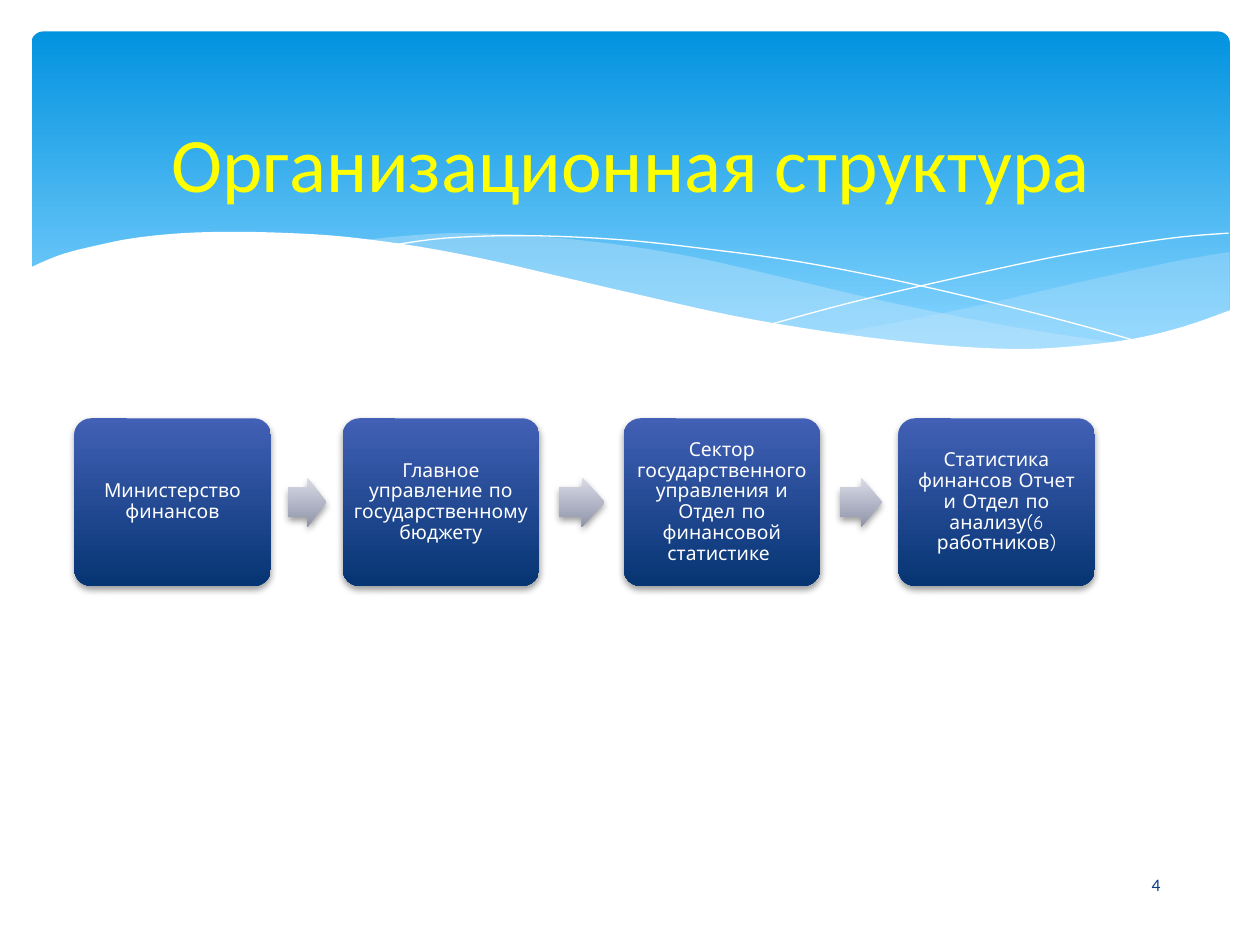
"""Build the organisational structure slide: a wave header above a four-step process."""
import lxml.etree
import pptx
import pptx.dml.color
import pptx.enum.shapes
import pptx.enum.text
import pptx.oxml.ns
import pptx.util

Inches = pptx.util.Inches
Pt = pptx.util.Pt
ShapeType = pptx.enum.shapes.MSO_SHAPE

COLORS = {
    "white": "FFFFFF", "title": "FFFF00", "number": "073E87", "wave": "C6E7FC",
    "sky_top": "0293E0", "sky_bottom": "83D3FE",
    "step_top": "4260B5", "step_bottom": "063573",
    "arrow_top": "DADCE6", "arrow_bottom": "8F94AA", "shadow": "000000",
}
STEP_TOP, STEP_WIDTH, STEP_HEIGHT, ARROW_HEIGHT = 3.32, 1.56, 1.33, 0.39
STEPS = [
    (0.59, "Министерство финансов"),
    (2.72, "Главное управление по государственному бюджету"),
    (4.95, "Сектор государственного управления и Отдел по финансовой статистике "),
    (7.13, "Статистика финансов Отчет и Отдел по анализу(6 работников)"),
]
ARROWS = [(2.29, 0.3, -0.3), (4.44, 0.36, 0.3), (6.67, 0.33, 0)]

RIGHT_WAVE_TOP = [(9.76, 2), (9.35, 2.07), (8.61, 2.23), (7.79, 2.42), (7.06, 2.57), (6.61, 2.65)]
RIGHT_WAVE_BOTTOM = [(6.61, 2.65), (7.19, 2.72), (7.69, 2.77), (8.14, 2.78), (8.63, 2.75),
                     (9.05, 2.69), (9.42, 2.59), (9.76, 2.47)]
LEFT_WAVE_TOP = [(8.93, 2.73), (8.07, 2.6), (7.06, 2.4), (6.29, 2.22), (5.55, 2.05), (4.89, 1.94),
                 (4.2, 1.87), (3.61, 1.85), (3.13, 1.88), (2.86, 1.91)]
LEFT_WAVE_BOTTOM = [(2.86, 1.91), (3.62, 2.03), (4.49, 2.22), (5.3, 2.4), (6.01, 2.55), (6.65, 2.66),
                    (7.22, 2.74), (7.73, 2.77), (8.18, 2.78), (8.57, 2.77), (8.93, 2.73)]
FALLING_LINE = [(3.09, 1.95), (3.53, 1.89), (4.16, 1.87), (4.89, 1.9), (5.56, 1.97), (6.36, 2.08),
                (7.27, 2.26), (8.31, 2.51), (9.07, 2.72)]
RISING_LINE = [(6.13, 2.57), (6.72, 2.41), (7.48, 2.23), (8.36, 2.04), (8.95, 1.94), (9.38, 1.88),
               (9.75, 1.85)]
WHITE_WAVE = [(9.77, 2.46), (9.4, 2.59), (8.99, 2.69), (8.5, 2.75), (8.09, 2.77), (7.61, 2.75),
              (7.08, 2.7), (6.48, 2.62), (5.79, 2.5), (5.03, 2.33), (4.47, 2.2), (3.91, 2.07),
              (3.4, 1.97), (2.92, 1.9), (2.5, 1.86), (1.93, 1.84), (1.46, 1.85), (1.06, 1.89),
              (0.76, 1.95), (0.52, 2.01), (0.36, 2.07), (0.23, 2.13)]


def rgb(name):
    return pptx.dml.color.RGBColor.from_string(COLORS[name])


def add_xml(parent, tag, **attributes):
    return lxml.etree.SubElement(parent, pptx.oxml.ns.qn(tag), attributes)


def set_gradient(shape, name, end=1.0):
    shape.fill.gradient()
    shape.fill.gradient_angle = 270
    stops = shape.fill.gradient_stops
    for stop, position, edge in zip(stops, (0, end), ("top", "bottom")):
        stop.position = position
        stop.color.rgb = rgb(f"{name}_{edge}")


def add_shadow(shape):
    effects = shape._element.spPr.find(pptx.oxml.ns.qn("a:effectLst"))
    shadow = add_xml(effects, "a:outerShdw", blurRad=str(Pt(4)), dist=str(Pt(2)),
                     dir="5400000", rotWithShape="0")
    color = add_xml(shadow, "a:srgbClr", val=COLORS["shadow"])
    add_xml(color, "a:alpha", val="38000")


def add_preset(slide, kind, left, top, width, height, gradient, adjustments, end=1.0):
    shape = slide.shapes.add_shape(kind, Inches(left), Inches(top), Inches(width), Inches(height))
    shape.shadow.inherit = False
    shape.line.fill.background()
    set_gradient(shape, gradient, end)
    for index, value in enumerate(adjustments):
        shape.adjustments[index] = value
    return shape


def smooth(points, steps=5):
    """Return a Catmull-Rom curve through the points."""
    padded = [points[0], *points, points[-1]]
    curve = [points[0]]
    for a, b, c, d in zip(padded, padded[1:], padded[2:], padded[3:]):
        for step in range(1, steps + 1):
            t = step / steps
            curve.append(tuple(
                q + t / 2 * (r - p + t * (2 * p - 5 * q + 4 * r - s + t * (3 * (q - r) + s - p)))
                for p, q, r, s in zip(a, b, c, d)))
    return curve


def add_curve(slide, points, fill=None, opacity=100):
    """Draw a filled outline, or a thin white line when there is no fill."""
    scaled = [(Inches(x), Inches(y)) for x, y in points]
    builder = slide.shapes.build_freeform(*scaled[0])
    builder.add_line_segments(scaled[1:], close=fill is not None)
    shape = builder.convert_to_shape()
    shape.shadow.inherit = False
    if fill is None:
        shape.fill.background()
        shape.line.color.rgb = rgb("white")
        shape.line.width = Pt(0)
        return
    shape.line.fill.background()
    shape.fill.solid()
    shape.fill.fore_color.rgb = rgb(fill)
    if opacity < 100:
        color = shape._element.spPr.find(".//" + pptx.oxml.ns.qn("a:srgbClr"))
        add_xml(color, "a:alpha", val=str(opacity * 1000))


def write_text(shape, text, *, size, color, font="Calibri", inset=None, spacing=None):
    frame = shape.text_frame
    frame.word_wrap = True
    frame.vertical_anchor = pptx.enum.text.MSO_ANCHOR.MIDDLE
    if inset is not None:
        frame.margin_left = frame.margin_right = Inches(inset)
        frame.margin_top = frame.margin_bottom = Inches(inset)
    paragraph = frame.paragraphs[0]
    paragraph.alignment = pptx.enum.text.PP_ALIGN.CENTER
    if spacing is not None:
        paragraph.line_spacing = spacing
    run = paragraph.add_run()
    run.text = text
    run.font.size = Pt(size)
    run.font.name = font
    run.font.color.rgb = rgb(color)


def add_label(slide, text, left, top, width, height, **text_format):
    box = slide.shapes.add_textbox(Inches(left), Inches(top), Inches(width), Inches(height))
    write_text(box, text, **text_format)


def add_header(slide):
    add_preset(slide, ShapeType.ROUNDED_RECTANGLE, 0.25, 0.25, 9.51, 2.7, "sky", [0.034], end=0.9)
    add_curve(slide, smooth(RIGHT_WAVE_TOP) + smooth(RIGHT_WAVE_BOTTOM), "wave", 29)
    add_curve(slide, smooth(LEFT_WAVE_TOP) + smooth(LEFT_WAVE_BOTTOM), "wave", 40)
    add_curve(slide, smooth(FALLING_LINE))
    add_curve(slide, smooth(RISING_LINE))
    add_curve(slide, smooth(WHITE_WAVE) + [(0.23, 3.29), (9.77, 3.29)], "white")


def add_step(slide, left, text):
    step = add_preset(slide, ShapeType.ROUNDED_RECTANGLE, left, STEP_TOP, STEP_WIDTH, STEP_HEIGHT,
                      "step", [0.1])
    add_shadow(step)
    write_text(step, text, size=11, color="white", font="Comic Neue", inset=0.05, spacing=0.9)


def add_arrow(slide, left, width, rotation):
    top = STEP_TOP + (STEP_HEIGHT - ARROW_HEIGHT) / 2
    arrow = add_preset(slide, ShapeType.RIGHT_ARROW, left, top, width, ARROW_HEIGHT,
                       "arrow", [0.6, 0.5])
    arrow.rotation = rotation
    add_shadow(arrow)


def main():
    presentation = pptx.Presentation()
    presentation.slide_width, presentation.slide_height = Inches(10), Inches(7.5)
    slide = presentation.slides.add_slide(presentation.slide_layouts[6])
    add_header(slide)
    for left, text in STEPS:
        add_step(slide, left, text)
    for left, width, rotation in ARROWS:
        add_arrow(slide, left, width, rotation)
    add_label(slide, "Организационная структура", 0.51, 0.6, 9, 1.37, size=44, color="title")
    add_label(slide, "4", 8.54, 6.82, 1.27, 0.4, size=10, color="number")
    presentation.save("out.pptx")


if __name__ == "__main__":
    main()
